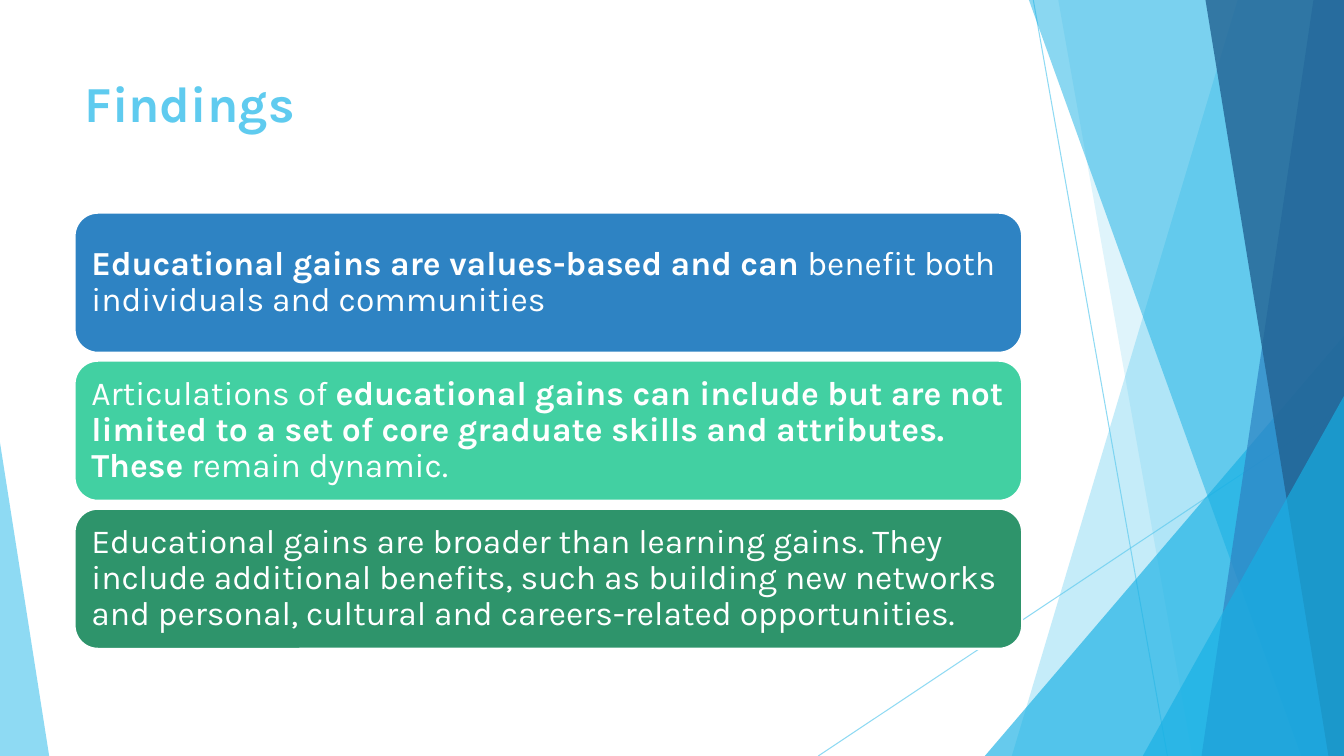
from lxml.etree import SubElement
from pptx import Presentation
from pptx.dml.color import RGBColor
from pptx.enum.shapes import MSO_CONNECTOR, MSO_SHAPE
from pptx.enum.text import MSO_ANCHOR, PP_ALIGN
from pptx.oxml.ns import qn
from pptx.util import Cm, Pt

WHITE = RGBColor(0xFF, 0xFF, 0xFF)
SKY = RGBColor(0x5F, 0xCB, 0xEF)
CYAN = RGBColor(0x17, 0xB0, 0xE4)
BLUE = RGBColor(0x2E, 0x83, 0xC3)
NAVY = RGBColor(0x22, 0x62, 0x92)
MINT = RGBColor(0x42, 0xD0, 0xA2)
GREEN = RGBColor(0x2E, 0x94, 0x6B)
WIDTH, HEIGHT = 33.87, 19.05


class Deck:
    font = "Karla"
    margin = 0.25

    def __init__(self):
        self.prs = Presentation()
        self.prs.slide_width, self.prs.slide_height = Cm(WIDTH), Cm(HEIGHT)
        self.s = self.prs.slides.add_slide(self.prs.slide_layouts[5])

    def paint(self, sp_pr, fill, color, opacity):
        fill.solid()
        fill.fore_color.rgb = color
        clr = sp_pr.find(qn("a:solidFill"))[0]
        SubElement(clr, qn("a:alpha"), val=str(opacity * 1000))

    def finish(self, sp, color, opacity):
        sp.shadow.inherit = False
        sp.line.fill.background()
        self.paint(sp._element.spPr, sp.fill, color, opacity)

    def line(self, x1, y1, x2, y2):
        sp = self.s.shapes.add_connector(
            MSO_CONNECTOR.STRAIGHT, Cm(x1), Cm(y1), Cm(x2), Cm(y2))
        sp.line.width = Pt(0.75)
        sp_pr = sp._element.spPr
        self.paint(sp_pr.find(qn("a:ln")), sp.line.fill, SKY, 70)
        SubElement(sp_pr, qn("a:effectLst"))

    def band(self, top_x, bottom_x, color, opacity):
        fb = self.s.shapes.build_freeform(Cm(top_x), 0)
        fb.add_line_segments([(Cm(WIDTH), 0), (Cm(WIDTH), Cm(HEIGHT)),
                              (Cm(bottom_x), Cm(HEIGHT))])
        self.finish(fb.convert_to_shape(), color, opacity)

    def triangle(self, x, y, w, apex, color, opacity):
        sp = self.s.shapes.add_shape(
            MSO_SHAPE.ISOSCELES_TRIANGLE, Cm(x), Cm(y), Cm(w), Cm(HEIGHT - y))
        sp.adjustments[0] = apex
        self.finish(sp, color, opacity)

    def add_text(self, tf, runs, size, color, anchor):
        tf.word_wrap = True
        tf.vertical_anchor = anchor
        tf.margin_left = tf.margin_right = Cm(self.margin)
        p = tf.paragraphs[0]
        p.alignment = PP_ALIGN.LEFT
        for text, bold in runs:
            r = p.add_run()
            r.text = text
            r.font.name, r.font.size, r.font.bold = self.font, Pt(size), bold
            r.font.color.rgb = color
        return p

    def title(self, text, x, y, w, h):
        sp = self.s.shapes.title
        sp.left, sp.top, sp.width, sp.height = Cm(x), Cm(y), Cm(w), Cm(h)
        self.add_text(sp.text_frame, [(text, True)], 36, SKY, MSO_ANCHOR.TOP)

    def card(self, x, y, w, h, color, runs):
        sp = self.s.shapes.add_shape(
            MSO_SHAPE.ROUNDED_RECTANGLE, Cm(x), Cm(y), Cm(w), Cm(h))
        sp.shadow.inherit = False
        sp.fill.solid()
        sp.fill.fore_color.rgb = color
        sp.line.color.rgb = WHITE
        sp.line.width = Pt(1.5)
        tf = sp.text_frame
        tf.margin_top = tf.margin_bottom = Cm(self.margin)
        p = self.add_text(tf, runs, 24, WHITE, MSO_ANCHOR.MIDDLE)
        p.line_spacing = 0.9


def main():
    deck = Deck()
    deck.line(26.04, 0, 29.42, HEIGHT)
    deck.line(WIDTH, 10.23, 20.62, HEIGHT)
    deck.band(31.19, 25.5, SKY, 36)
    deck.band(26.67, 30.05, SKY, 20)
    deck.triangle(24.82, 8.46, 9.05, 1, CYAN, 66)
    deck.band(25.93, 32.79, CYAN, 50)
    deck.band(33.1, 30.28, BLUE, 70)
    deck.band(30.38, 33.48, NAVY, 80)
    deck.triangle(28.8, 9.98, 5.07, 1, CYAN, 66)
    deck.triangle(0, 11.15, 1.24, 0, SKY, 70)

    deck.title("Findings", 1.88, 1.7, 23.88, 2.44)
    findings = [
        (BLUE, [("Educational gains are values-based and can ", True),
                ("benefit both individuals and communities", False)]),
        (MINT, [("Articulations of ", False),
                ("educational gains can include but are not limited to a set "
                 "of core graduate skills and attributes. These", True),
                (" remain dynamic.", False)]),
        (GREEN, [("Educational gains are broader than learning gains. They "
                  "include additional benefits, such as building new networks "
                  "and personal, cultural and careers-related opportunities.",
                  False)]),
    ]
    for i, (color, runs) in enumerate(findings):
        deck.card(1.88, 5.36 + i * 3.73, 23.88, 3.53, color, runs)

    deck.prs.save("out.pptx")


if __name__ == "__main__":
    main()
